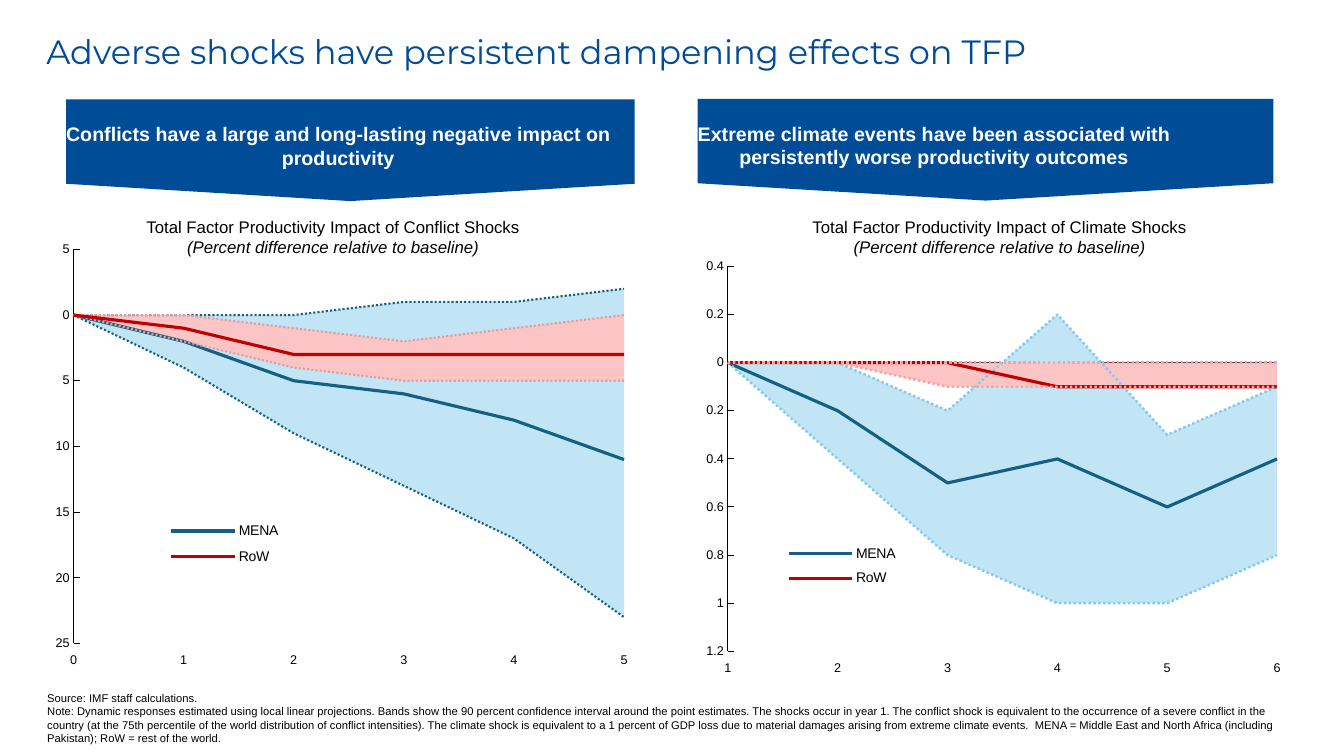
import pptx
import pptx.chart.data
import pptx.dml.color
import pptx.enum.chart
import pptx.enum.dml
import pptx.enum.shapes
import pptx.enum.text
import pptx.oxml
import pptx.oxml.ns
import pptx.util

Inches = pptx.util.Inches
Pt = pptx.util.Pt
qn = pptx.oxml.ns.qn
CENTER = pptx.enum.text.PP_ALIGN.CENTER
NAVY = "004C97"
TEAL = "156082"
SKY = "C1E5F5"
PINK = "FBC5C5"
RED = "C00000"
TICK_FORMAT = "[>0.1]General;[>-0.1]0;General"


def rgb(color):
    return pptx.dml.color.RGBColor.from_string(color)


def element(xml):
    ns = pptx.oxml.ns.nsdecls("c", "a")
    return pptx.oxml.parse_xml(xml.replace(">", f" {ns}>", 1))


def layout(box, inner=False):
    target = '<c:layoutTarget val="inner"/>' if inner else ""
    modes = "".join(f'<c:{k}Mode val="edge"/>' for k in "xy")
    sizes = "".join(f'<c:{k} val="{v}"/>' for k, v in zip("xywh", box))
    return element(f"<c:layout><c:manualLayout>{target}{modes}{sizes}</c:manualLayout></c:layout>")


def stacked_bands(*bounds):
    base = (0,) * len(bounds[0])
    bands = []
    for color, bound in zip((None, SKY, None, PINK), bounds):
        bands.append(("", color, [round(b - a, 1) for a, b in zip(base, bound)]))
        base = bound
    return bands


class Deck:
    def __init__(self, prs, font="Arial"):
        self.font = font
        self.s = prs.slides.add_slide(prs.slide_layouts[6])

    def run(self, p, text, size, color="000000", font=None, bold=False, italic=False):
        r = p.add_run()
        r.text = text
        self.style(r.font, size, color, font)
        r.font.bold = bold
        r.font.italic = italic

    def style(self, f, size, color="000000", font=None):
        f.name = font or self.font
        f.size = Pt(size)
        f.color.rgb = rgb(color)

    def text(self, box):
        tf = self.s.shapes.add_textbox(*map(Inches, box)).text_frame
        tf.word_wrap = True
        return tf

    def flush(self, tf):
        tf.margin_left = tf.margin_right = tf.margin_top = tf.margin_bottom = 0
        tf.vertical_anchor = pptx.enum.text.MSO_ANCHOR.MIDDLE

    def title(self, text, box):
        tf = self.text(box)
        self.flush(tf)
        p = tf.paragraphs[0]
        p.line_spacing = 0.9
        self.run(p, text, 24, NAVY, "Montserrat")

    def banner(self, text, box):
        sp = self.s.shapes.add_shape(pptx.enum.shapes.MSO_SHAPE.PENTAGON, *map(Inches, box))
        sp.adjustments[0] = 0.17
        sp.rotation = 90
        sp.shadow.inherit = False
        sp.fill.solid()
        sp.fill.fore_color.rgb = rgb(NAVY)
        sp.line.fill.background()
        tf = sp.text_frame
        tf.word_wrap = True
        self.flush(tf)
        body = tf._txBody.bodyPr
        body.set("rot", "10800000")
        body.set("vert", "eaVert")
        p = tf.paragraphs[0]
        p.alignment = CENTER
        self.run(p, text, 14, "FFFFFF", bold=True)

    def heading(self, text, left):
        tf = self.text((left, 2.05, 5.29, 0.56))
        p = tf.paragraphs[0]
        p.line_spacing = 1.25
        p.alignment = CENTER
        self.run(p, text, 12)
        p = tf.add_paragraph()
        p.alignment = CENTER
        self.run(p, "(Percent difference relative to baseline)", 12, italic=True)

    def notes(self, lines, box):
        tf = self.text(box)
        for i, line in enumerate(lines):
            p = tf.add_paragraph() if i else tf.paragraphs[0]
            self.run(p, line, 8)

    def axis(self, ax, color):
        ax.has_major_gridlines = False
        ax.minor_tick_mark = pptx.enum.chart.XL_TICK_MARK.NONE
        ax.format.line.color.rgb = rgb(color)
        ax.format.line.width = Pt(0.75)
        self.style(ax.tick_labels.font, 9)

    def chart(self, box, cats, bands, lines, scale, plot_box, legend_box, base_color):
        data = pptx.chart.data.CategoryChartData()
        data.categories = cats
        names = []
        for i, (name, *_, vals) in enumerate(bands + lines):
            names.append(name)
            data.add_series(name or f"Series {i + 1}", vals)
        kind = pptx.enum.chart.XL_CHART_TYPE.AREA_STACKED
        chart = self.s.shapes.add_chart(kind, *map(Inches, box), data).chart
        chart.has_title = False
        self.style(chart.font, 10)

        area = chart._chartSpace.find(".//" + qn("c:areaChart"))
        line_chart = element('<c:lineChart><c:grouping val="standard"/><c:varyColors val="0"/></c:lineChart>')
        for ser in area.findall(qn("c:ser"))[len(bands):]:
            line_chart.append(ser)
        line_chart.append(element('<c:marker val="1"></c:marker>'))
        for ax_id in area.findall(qn("c:axId")):
            line_chart.append(element(f'<c:axId val="{ax_id.get("val")}"></c:axId>'))
        area.addnext(line_chart)

        for plot in chart.plots:
            plot.vary_by_categories = False
        for ser, (_, color, _) in zip(chart.plots[0].series, bands):
            if color:
                ser.format.fill.solid()
                ser.format.fill.fore_color.rgb = rgb(color)
            else:
                ser.format.fill.background()
            ser.format.line.fill.background()
        for ser, (_, color, width, _) in zip(chart.plots[1].series, lines):
            ser.smooth = False
            ser.marker.style = pptx.enum.chart.XL_MARKER_STYLE.NONE
            ser.format.line.color.rgb = rgb(color)
            ser.format.line.width = Pt(width)
            if width < 2:
                ser.format.line.dash_style = pptx.enum.dml.MSO_LINE.ROUND_DOT

        cat, val = chart.category_axis, chart.value_axis
        self.axis(cat, base_color)
        cat.major_tick_mark = pptx.enum.chart.XL_TICK_MARK.NONE
        cat.tick_label_position = pptx.enum.chart.XL_TICK_LABEL_POSITION.LOW
        self.axis(val, "000000")
        val.major_tick_mark = pptx.enum.chart.XL_TICK_MARK.INSIDE
        val.minimum_scale, val.maximum_scale, val.major_unit = scale
        val.tick_labels.number_format = TICK_FORMAT
        val.tick_labels.number_format_is_linked = False
        val._element.find(qn("c:crossBetween")).set("val", "midCat")

        plot_area = area.getparent()
        for old in plot_area.findall(qn("c:layout")):
            plot_area.remove(old)
        plot_area.insert(0, layout(plot_box, True))
        chart.has_legend = True
        chart.legend.include_in_layout = False
        self.style(chart.legend.font, 10)
        legend = chart.legend._element
        for old in legend.findall(qn("c:layout")):
            legend.remove(old)
        hidden = [i for i, name in enumerate(names) if not name]
        entries = [element(f'<c:legendEntry><c:idx val="{i}"/><c:delete val="1"/></c:legendEntry>') for i in hidden]
        for i, entry in enumerate(entries + [layout(legend_box)]):
            legend.insert(1 + i, entry)
        chart._chartSpace.find(qn("c:chart")).addnext(
            element("<c:spPr><a:noFill/><a:ln><a:noFill/></a:ln></c:spPr>"))


def main():
    prs = pptx.Presentation()
    prs.slide_width, prs.slide_height = Inches(13.33), Inches(7.5)
    d = Deck(prs)
    d.title("Adverse shocks have persistent dampening effects on TFP", (0.46, 0, 12.4, 1.07))
    d.banner("Conflicts have a large and long-lasting negative impact on productivity", (2.97, -1.33, 1.01, 5.64))
    d.banner("Extreme climate events have been associated with persistently worse productivity outcomes",
             (9.27, -1.37, 1.01, 5.71))
    d.heading("Total Factor Productivity Impact of Climate Shocks", 7.27)
    d.notes([
        "Source: IMF staff calculations.",
        "Note: Dynamic responses estimated using local linear projections. Bands show the 90 percent confidence "
        "interval around the point estimates. The shocks occur in year 1. The conflict shock is equivalent to the "
        "occurrence of a severe conflict in the country (at the 75th percentile of the world distribution of conflict "
        "intensities). The climate shock is equivalent to a 1 percent of GDP loss due to material damages arising from "
        "extreme climate events.  MENA = Middle East and North Africa (including Pakistan); RoW = rest of the world.",
    ], (0.37, 6.81, 12.54, 0.64))
    d.heading("Total Factor Productivity Impact of Conflict Shocks", 0.66)
    mena_low, mena_high = (0, -4, -9, -13, -17, -23), (0, 0, 0, 1, 1, 2)
    row_low, row_high = (0, -2, -4, -5, -5, -5), (0, 0, -1, -2, -1, 0)
    d.chart((0.37, 1.93, 6, 4.95), list("012345"),
            stacked_bands(mena_low, mena_high, row_low, row_high),
            [("MENA", TEAL, 2.25, (0, -2, -5, -6, -8, -11)),
             ("", TEAL, 1.5, mena_low), ("", TEAL, 1.5, mena_high),
             ("", "E29E9E", 1.5, row_low), ("", "E29E9E", 1.5, row_high),
             ("RoW", RED, 2.25, (0, -1, -3, -3, -3, -3))],
            (-25, 5, 5), (0.06, 0.11, 0.91, 0.79), (0.21, 0.64, 0.2, 0.12), "D9D9D9")
    mena_low, mena_high = (0, -0.4, -0.8, -1, -1, -0.8), (0, 0, -0.2, 0.2, -0.3, -0.1)
    row_low, row_high = (0, 0, -0.1, -0.1, -0.1, -0.1), (0,) * 6
    d.chart((6.73, 2.47, 6.12, 4.34), list("123456"),
            stacked_bands(mena_low, mena_high, row_low, row_high),
            [("MENA", TEAL, 2.25, (0, -0.2, -0.5, -0.4, -0.6, -0.4)),
             ("", "83CBEB", 1.75, mena_low), ("", "83CBEB", 1.75, mena_high),
             ("RoW", RED, 2.25, (0, 0, 0, -0.1, -0.1, -0.1)),
             ("", "F8A2A2", 1.75, row_low), ("", "F8A2A2", 1.75, row_high)],
            (-1.2, 0.4, 0.2), (0.08, 0.04, 0.89, 0.88), (0.17, 0.66, 0.19, 0.13), "000000")
    prs.save("out.pptx")


if __name__ == "__main__":
    main()
